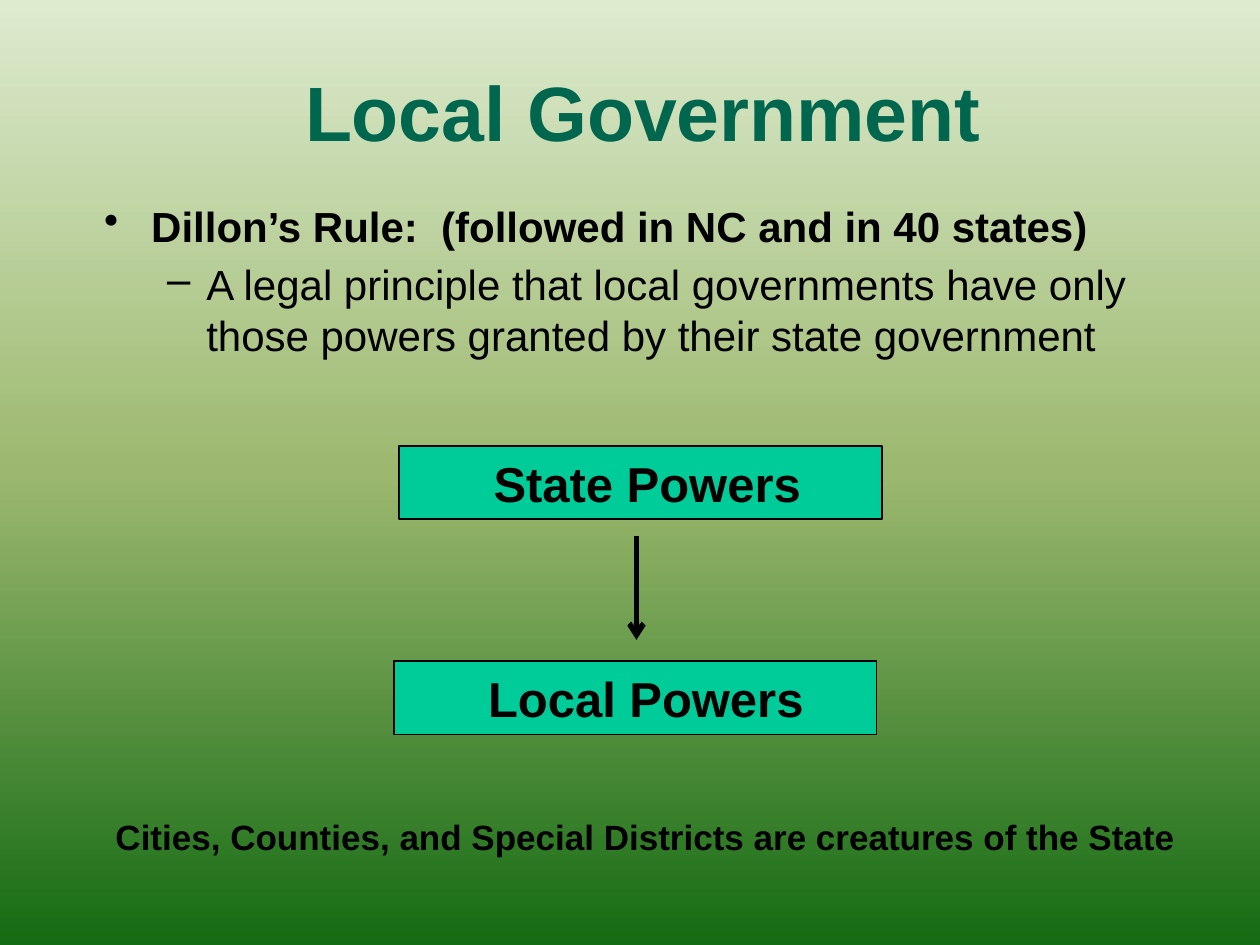
import copy

import pptx
import pptx.dml.color
import pptx.enum.shapes
import pptx.enum.text
import pptx.oxml.ns
import pptx.util
from lxml import etree

Cm, Pt = pptx.util.Cm, pptx.util.Pt
ALIGN = pptx.enum.text.PP_ALIGN
ANCHOR = pptx.enum.text.MSO_ANCHOR
qn = pptx.oxml.ns.qn

# Content
TITLE = "Local Government"
BULLETS = [
    # text, bullet, left margin (cm), hanging indent (cm), bold
    ("Dillon’s Rule:  (followed in NC and in 40 states)", "•", 0.95, 0.95, True),
    ("A legal principle that local governments have only those powers "
     "granted by their state government", "–", 2.06, 0.79, False),
]
POWERS = [("State Powers", 8.05, 8.99), ("Local Powers", 7.94, 13.33)]
CLOSING = "Cities, Counties, and Special Districts are creatures of the State"

BACKGROUND = [(0, "DDEBCF"), (50, "9CB86E"), (100, "156B13")]
BLACK, TEAL, DARK_GREEN = "000000", "00CC99", "00664D"


def color(value):
    return pptx.dml.color.RGBColor.from_string(value)


def write(paragraph, text, size, ink=BLACK, bold=True, align=ALIGN.LEFT,
          margin=0, hanging=0, bullet=None, before=0):
    span = paragraph.add_run()
    span.text = text
    span.font.name = "Arial"
    span.font.size = Pt(size)
    span.font.bold = bold
    span.font.color.rgb = color(ink)
    paragraph.alignment = align
    paragraph.space_before = Pt(before)
    properties = paragraph._p.get_or_add_pPr()
    properties.set("marL", str(Cm(margin)))
    properties.set("indent", str(-Cm(hanging)))
    if bullet:
        etree.SubElement(properties, qn("a:buChar")).set("char", bullet)


def add_text_box(page, left, top, width, height, anchor=ANCHOR.TOP):
    box = page.shapes.add_textbox(Cm(left), Cm(top), Cm(width), Cm(height))
    box.text_frame.word_wrap = True
    box.text_frame.vertical_anchor = anchor
    return box.text_frame


def paint_background(page):
    fill = page.background.fill
    fill.gradient()
    fill.gradient_angle = 270  # counter-clockwise: top to bottom
    stop_list = page.element.find(".//" + qn("a:gsLst"))
    stop_list.append(copy.deepcopy(stop_list[-1]))
    for stop, (percent, value) in zip(fill.gradient_stops, BACKGROUND):
        stop.position = percent / 100
        stop.color.rgb = color(value)


def add_power(page, text, left, top):
    box = page.shapes.add_shape(pptx.enum.shapes.MSO_SHAPE.RECTANGLE,
                                Cm(left), Cm(top), Cm(9.73), Cm(1.48))
    box.shadow.inherit = False
    box.fill.solid()
    box.fill.fore_color.rgb = color(TEAL)
    box.line.color.rgb = color(BLACK)
    box.line.width = Pt(1)
    box.text_frame.vertical_anchor = ANCHOR.MIDDLE
    write(box.text_frame.paragraphs[0], text, 28, margin=1.65)


def add_arrow(page, x, top, bottom):
    arrow = page.shapes.add_connector(pptx.enum.shapes.MSO_CONNECTOR.STRAIGHT,
                                      Cm(x), Cm(top), Cm(x), Cm(bottom))
    arrow.line.color.rgb = color(BLACK)
    arrow.line.width = Pt(3)
    etree.SubElement(arrow.line._get_or_add_ln(), qn("a:tailEnd")).set("type", "arrow")
    etree.SubElement(arrow._element.spPr, qn("a:effectLst"))


def main():
    deck = pptx.Presentation()
    deck.slide_width, deck.slide_height = Cm(25.4), Cm(19.05)
    page = deck.slides.add_slide(deck.slide_layouts[6])
    paint_background(page)

    # Title
    title = add_text_box(page, 1.12, 0.43, 23.7, 3.61, ANCHOR.MIDDLE)
    write(title.paragraphs[0], TITLE, 44, ink=DARK_GREEN, align=ALIGN.CENTER)

    # Rule and its meaning
    body = add_text_box(page, 1.85, 3.91, 22.23, 14.17)
    for index, (text, bullet, margin, hanging, bold) in enumerate(BULLETS):
        paragraph = body.add_paragraph() if index else body.paragraphs[0]
        write(paragraph, text, 24, bold=bold, margin=margin, hanging=hanging,
              bullet=bullet, before=4.8)

    # Flow of powers
    for text, left, top in POWERS:
        add_power(page, text, left, top)
    add_arrow(page, 12.83, 10.8, 12.9)

    # Closing line
    closing = add_text_box(page, 1.9, 16.31, 22.23, 1.12)
    write(closing.paragraphs[0], CLOSING, 20, align=ALIGN.CENTER)

    deck.save("out.pptx")


if __name__ == "__main__":
    main()
